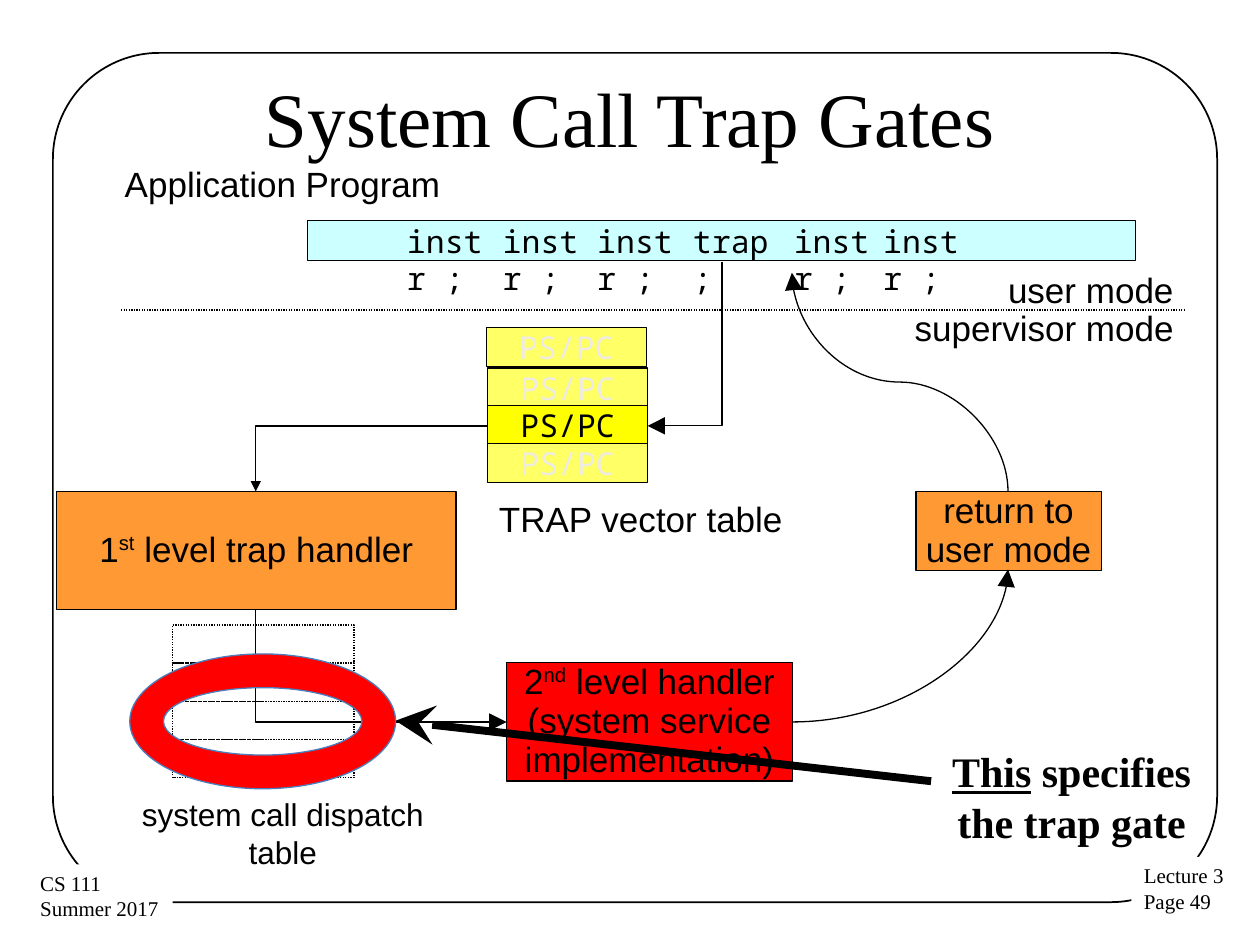
from lxml.etree import SubElement
from pptx import Presentation
from pptx.dml.color import RGBColor
from pptx.enum.dml import MSO_LINE
from pptx.enum.shapes import MSO_CONNECTOR as LINK, MSO_SHAPE as SHAPE
from pptx.enum.text import MSO_ANCHOR as ANCHOR, PP_ALIGN as ALIGN
from pptx.oxml.ns import qn
from pptx.util import Inches, Pt

# The slide is a grid of 1000 columns by 750 rows
COLUMNS, ROWS = 1000, 750
CELL = Inches(10) // COLUMNS
COLORS = {
    "ink": "000000", "paper": "FFFFFF", "handler": "FF9933", "alert": "FF0000",
    "program": "CCFFFF", "entry": "FFFF66", "chosen": "FFFF00",
    "faded": "EEECE1", "ring": "4B7EBC",
}
SANS, SERIF, MONO = "Arial", "Times New Roman", "Noto Sans Mono"

# Content: a paragraph is a string or a list of (text, style) runs
TITLE = ["System Call Trap Gates"]
FOOTERS = [
    ((898, 680, 84, 51), ["Lecture 3", "Page 49"]),
    ((22, 686, 115, 51), ["CS 111", "Summer 2017"]),
]
STEPS = [
    ((45, 390, 317, 94), "handler",
     [[("1", ""), ("st", "super"), (" level trap handler", "")]]),
    ((402, 526, 227, 94), "alert",
     [[("2", ""), ("nd", "super"), (" level handler", "")],
      "(system service implementation)"]),
    ((727, 390, 147, 63), "handler", ["return to", "user mode"]),
]
LABELS = [
    ((99, 132, 253, 31), "Application Program"),
    ((800, 216, 132, 31), "user mode"),
    ((726, 246, 207, 31), "supervisor mode"),
    ((396, 398, 227, 31), "TRAP vector table"),
]
INSTRUCTIONS = [(314, "instr ;"), (390, "instr ;"), (465, "instr ;"),
                (541, "trap ;"), (621, "instr ;"), (692, "instr ;")]
VECTOR_TOPS = [260, 292, 322, 352]
CHOSEN_VECTOR = 2
DISPATCH_ROWS = 4
DISPATCH_CAPTION = ["system call dispatch table"]
GATE_NOTE = [[("This", "underline"), (" specifies the trap gate", "")]]

# Control flow: start, end, preset, rotation, flip, head size
FLOWS = [
    ((573, 208), (514, 338), "bentConnector2", 90, "", "lg"),
    ((203, 484), (402, 573), "bentConnector2", 270, "flipH", "lg"),
    ((629, 573), (800, 452), "curvedConnector2", 0, "flipV", "lg"),
    ((800, 390), (628.5, 216.5), "curvedConnector3", 270, "flipV", "lg"),
    ((387, 338), (203, 390), "bentConnector2", 180, "flipV", "med"),
]

prs = Presentation()
prs.slide_width, prs.slide_height = CELL * COLUMNS, CELL * ROWS
slide = prs.slides.add_slide(prs.slide_layouts[6])


def cells(*values):
    return [int(value * CELL) for value in values]


def color(name):
    return RGBColor.from_string(COLORS[name])


def add_shape(area, kind=SHAPE.RECTANGLE, fill=None, line="ink", width=0.75,
              dotted=False, corner=None):
    shape = slide.shapes.add_shape(kind, *cells(*area))
    shape.shadow.inherit = False
    if corner is not None:
        shape.adjustments[0] = corner
    if fill:
        shape.fill.solid()
        shape.fill.fore_color.rgb = color(fill)
    else:
        shape.fill.background()
    if line:
        shape.line.color.rgb = color(line)
        shape.line.width = Pt(width)
        if dotted:
            shape.line.dash_style = MSO_LINE.ROUND_DOT
    else:
        shape.line.fill.background()
    return shape


def write(target, paragraphs, size=20, font=SANS, ink="ink", align=ALIGN.LEFT,
          anchor=ANCHOR.TOP, inset=(0, 0), wrap=True, spacing=None, bold=False):
    """Write into a shape, or into a new text box when given an area."""
    if isinstance(target, tuple):
        target = slide.shapes.add_textbox(*cells(*target))
    frame = target.text_frame
    frame.word_wrap, frame.vertical_anchor = wrap, anchor
    frame.margin_left = frame.margin_right = Inches(inset[0])
    frame.margin_top = frame.margin_bottom = Inches(inset[1])
    for index, content in enumerate(paragraphs):
        paragraph = frame.add_paragraph() if index else frame.paragraphs[0]
        paragraph.alignment = align
        if spacing:
            paragraph.line_spacing = spacing
        for text, style in [(content, "")] if isinstance(content, str) else content:
            run = paragraph.add_run()
            run.text = text
            run.font.name, run.font.size, run.font.bold = font, Pt(size), bold
            run.font.color.rgb = color(ink)
            if style == "underline":
                run.font.underline = True
            elif style == "super":
                run.font._element.set("baseline", "33000")


def connect(start, end, preset=None, rotation=0, flip="", head=None,
            head_size="lg", width=0.75, dotted=False):
    if preset:
        # A quarter turn swaps the frame's sides around its centre
        w, h = abs(end[0] - start[0]), abs(end[1] - start[1])
        if rotation % 180:
            w, h = h, w
        left, top = (start[0] + end[0] - w) / 2, (start[1] + end[1] - h) / 2
        start, end = (left, top), (left + w, top + h)
    link = slide.shapes.add_connector(LINK.STRAIGHT, *cells(*start, *end))
    link.line.color.rgb = color("ink")
    link.line.width = Pt(width)
    if dotted:
        link.line.dash_style = MSO_LINE.ROUND_DOT
    properties = link._element.spPr
    if preset:
        properties.find(qn("a:prstGeom")).set("prst", preset)
        frame = properties.find(qn("a:xfrm"))
        frame.set("rot", str(rotation * 60000))
        if flip:
            frame.set(flip, "1")
    if head:
        SubElement(properties.find(qn("a:ln")), qn("a:tailEnd"),
                   type=head, w=head_size, len=head_size)
    SubElement(properties, qn("a:effectLst"))


# Page frame, footers and title
add_shape((42, 42, 924, 674), SHAPE.ROUNDED_RECTANGLE, width=1, corner=0.125)
for area, lines in FOOTERS:
    write(add_shape(area, fill="paper", line=None), lines, size=12, font=SERIF,
          inset=(0.1, 0.05), wrap=False)
write((50, 30, 900, 125), TITLE, size=44, font=SERIF, align=ALIGN.CENTER,
      anchor=ANCHOR.MIDDLE, inset=(0.1, 0.05))

# Handlers, program strip and labels
for area, fill, lines in STEPS:
    write(add_shape(area, fill=fill), lines, align=ALIGN.CENTER,
          anchor=ANCHOR.MIDDLE, spacing=0.93)
add_shape((244, 175, 657, 32), fill="program")
for area, label in LABELS:
    write(area, [label], wrap=False, spacing=0.93)

# Mode boundary and control flow
connect((96, 246), (941, 246), dotted=True)
for start, end, preset, rotation, flip, head_size in FLOWS:
    connect(start, end, preset, rotation, flip, "triangle", head_size)

# Trap vector table
for row, top in enumerate(VECTOR_TOPS):
    chosen = row == CHOSEN_VECTOR
    entry = add_shape((387 if row else 386, top, 127, 31),
                      fill="chosen" if chosen else "entry")
    write(entry, ["PS/PC"], size=18, font=MONO, ink="ink" if chosen else "faded",
          align=ALIGN.CENTER, anchor=ANCHOR.MIDDLE, inset=(0.09, 0.05), wrap=False)

# Program instructions
for left, instruction in INSTRUCTIONS:
    write((left, 171, 83 if instruction == "trap ;" else 87, 39), [instruction],
          size=18, font=MONO, inset=(0.09, 0.05))

# System call dispatch table
for row in range(DISPATCH_ROWS):
    add_shape((137, 496 + 30.3 * row, 144, 30.3), dotted=True)
write((77, 626, 295, 70), DISPATCH_CAPTION, size=18, align=ALIGN.CENTER,
      inset=(0.09, 0.05))

# Trap gate highlight
add_shape((103, 519, 211, 107), SHAPE.DONUT, fill="alert", line="ring")
connect((739, 620), (314, 572), head="stealth", width=4.5)
write((739, 587, 223, 91), GATE_NOTE, size=24, font=SERIF, bold=True,
      align=ALIGN.CENTER, inset=(0.1, 0.05))

prs.save("out.pptx")
